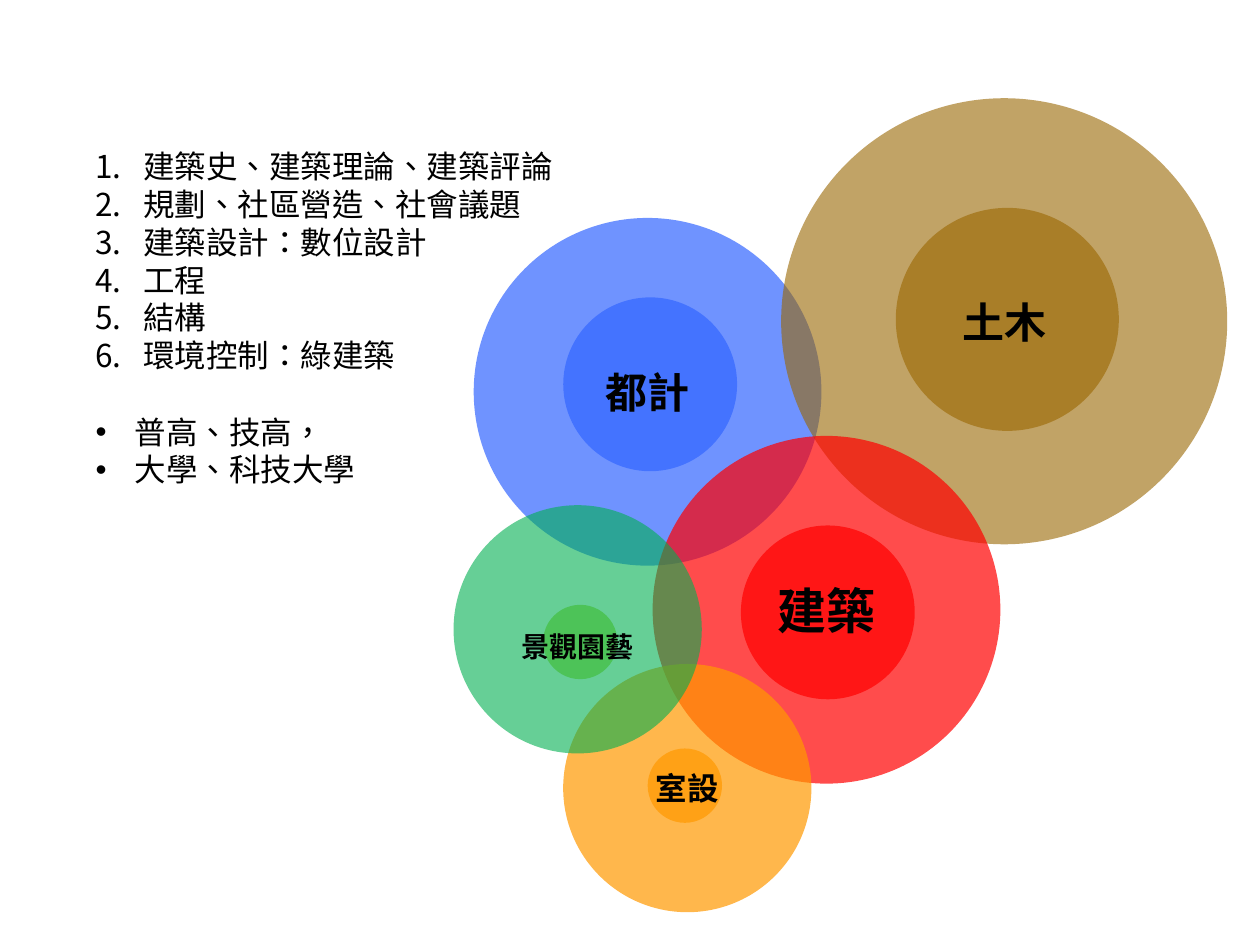
from dataclasses import dataclass

from lxml.etree import SubElement
from pptx import Presentation
from pptx.dml.color import RGBColor
from pptx.enum.shapes import MSO_SHAPE
from pptx.enum.text import MSO_ANCHOR as Anchor, MSO_AUTO_SIZE as AutoSize, PP_ALIGN as Align
from pptx.oxml.ns import qn
from pptx.util import Emu, Pt

PX = 9144


@dataclass(frozen=True)
class Theme:
    latin: str = "Arial"
    asian: str = "Noto Sans CJK SC"
    ink: str = "000000"
    blue: str = "3366FF"
    brown: str = "996600"
    red: str = "FF0000"
    orange: str = "FF9900"
    green: str = "00B050"
    lime: str = "99CC00"
    body: int = 18
    small: int = 16
    label: int = 24
    main: int = 28
    line_gap: int = 22


THEME = Theme()

TOPICS = ["建築史、建築理論、建築評論", "規劃、社區營造、社會議題", "建築設計：數位設計",
          "工程", "結構", "環境控制：綠建築"]
SCHOOLS = ["普高、技高，", "大學、科技大學"]

FIELDS = [
    dict(text="都計", box=(376, 173, 276), core=(71, 63, 138),
         color=THEME.blue, opacity=70, size=THEME.label),
    dict(text="土木", box=(620, 78, 354), core=(91, 87, 177),
         color=THEME.brown, opacity=60, size=THEME.label),
    dict(text="建築", box=(518, 346, 276), core=(70, 71, 138),
         color=THEME.red, opacity=70, size=THEME.main),
    dict(text="室設", box=(447, 527, 197), core=(67, 67, 59),
         color=THEME.orange, opacity=70, size=THEME.body),
    dict(text="景觀園藝", box=(360, 401, 197), core=(71, 79, 59),
         color=THEME.green, core_color=THEME.lime, opacity=60,
         size=THEME.small, text_drop=27),
]


def px(value):
    return Emu(value * PX)


def write(paragraph, text, *, size, font=THEME.latin, bold=False, align=Align.LEFT):
    paragraph.alignment = align
    run = paragraph.add_run()
    run.text = text
    run.font.size = Pt(size)
    run.font.bold = bold
    run.font.name = font
    run.font.color.rgb = RGBColor.from_string(THEME.ink)
    properties = run._r.get_or_add_rPr()
    properties.set("lang", "zh-TW")
    SubElement(properties, qn("a:ea"), typeface=THEME.asian)


def add_marker(paragraph, indent, font, tag, **attributes):
    properties = paragraph._p.get_or_add_pPr()
    properties.set("marL", str(px(indent)))
    properties.set("indent", str(-px(indent)))
    SubElement(properties, qn("a:buFont"), typeface=font)
    SubElement(properties, qn(tag), **attributes)


def add_topic_list(slide, left, top, width, height):
    shape = slide.shapes.add_textbox(px(left), px(top), px(width), px(height))
    frame = shape.text_frame
    frame.word_wrap = True
    frame.auto_size = AutoSize.SHAPE_TO_FIT_TEXT
    for index, text in enumerate(TOPICS + SCHOOLS):
        paragraph = frame.add_paragraph() if index else frame.paragraphs[0]
        if index < len(TOPICS):
            add_marker(paragraph, 38, THEME.asian, "a:buAutoNum", type="arabicPeriod")
        else:
            add_marker(paragraph, 31, THEME.latin, "a:buChar", char="•")
        if index == len(TOPICS):
            paragraph.space_before = Pt(THEME.line_gap)
        write(paragraph, text, size=THEME.body)


def add_circle(group, left, top, diameter, color, opacity):
    circle = group.shapes.add_shape(
        MSO_SHAPE.OVAL, px(left), px(top), px(diameter), px(diameter))
    circle.shadow.inherit = False
    circle.line.fill.background()
    circle.fill.solid()
    circle.fill.fore_color.rgb = RGBColor.from_string(color)
    color_element = circle._element.spPr.find(qn("a:solidFill"))[0]
    SubElement(color_element, qn("a:alpha"), val=str(opacity * 1000))
    return circle


def add_field(slide, *, text, box, core, color, opacity, size, core_color=None, text_drop=0):
    left, top, diameter = box
    core_left, core_top, core_diameter = core
    group = slide.shapes.add_group_shape()
    add_circle(group, left + core_left, top + core_top, core_diameter,
               core_color or color, opacity)
    frame = add_circle(group, left, top, diameter, color, opacity).text_frame
    frame.word_wrap = False
    frame.vertical_anchor = Anchor.MIDDLE
    frame.margin_top = px(5 + text_drop)
    write(frame.paragraphs[0], text, size=size, font=THEME.asian,
          bold=True, align=Align.CENTER)


def main():
    presentation = Presentation()
    presentation.slide_width = px(1000)
    presentation.slide_height = px(750)
    slide = presentation.slides.add_slide(presentation.slide_layouts[6])
    add_topic_list(slide, 66, 112, 411, 283)
    for field in FIELDS:
        add_field(slide, **field)
    presentation.save("out.pptx")


if __name__ == "__main__":
    main()
